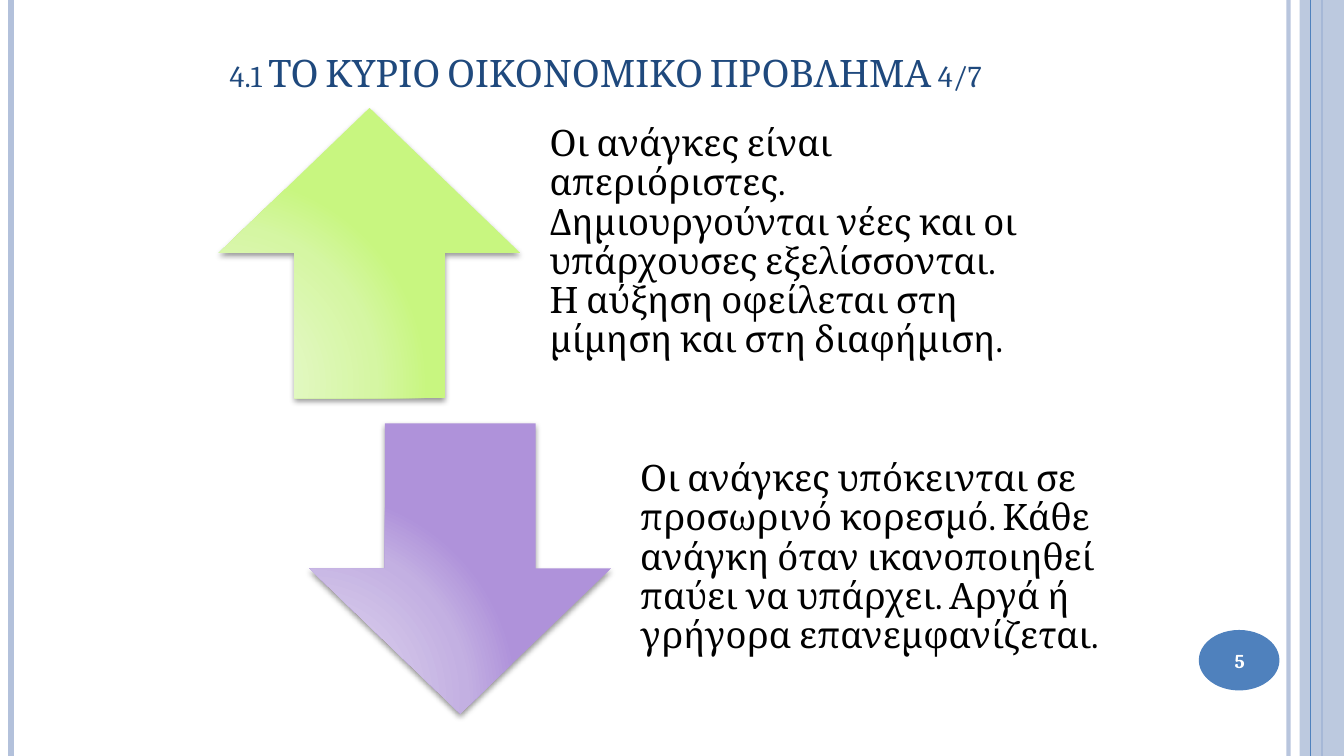
from dataclasses import dataclass

from lxml import etree
from pptx import Presentation
from pptx import util as u
from pptx.dml.color import RGBColor
from pptx.enum import shapes, text
from pptx.oxml import parse_xml
from pptx.oxml.ns import nsdecls, qn

PX = 9144  # 100 px to the inch
WIDTH, HEIGHT = 1333, 750
FONT = "Cambria"
PALE, BLUE, NAVY = "B3C1DB", "4F81BD", "1F497D"
ARROW_SIZE = (299, 288)
NOTE_SIZE = (508, 288)
NOTE_OFFSET = 308
Shape = shapes.MSO_SHAPE
Anchor = text.MSO_ANCHOR
Align = text.PP_ALIGN


@dataclass
class Rule:
    x: int
    color: str
    weight: float
    opacity: int = 100


@dataclass
class Need:
    left: int
    top: int
    arrow: Shape
    shades: tuple
    note: str


RULES_BELOW = [Rule(1278, PALE, 3, 93), Rule(11, PALE, 4.5), Rule(1311, BLUE, 1.5)]
RULE_ABOVE = Rule(1300, BLUE, 0.75)
SHADE_STOPS = (0, 30, 75, 100)
NEEDS = [
    Need(217, 107, Shape.UP_ARROW, ("E5F9C9", "E3F8C4", "D5F6A3", "C8F680"),
         "Οι ανάγκες είναι απεριόριστες. Δημιουργούνται νέες και οι υπάρχουσες "
         "εξελίσσονται. Η αύξηση οφείλεται στη μίμηση και στη διαφήμιση."),
    Need(307, 420, Shape.DOWN_ARROW, ("DBD0ED", "D8CCEB", "C3B0E2", "AF92DA"),
         "Οι ανάγκες υπόκεινται σε προσωρινό κορεσμό. Κάθε ανάγκη όταν ικανοποιηθεί "
         "παύει να υπάρχει. Αργά ή γρήγορα επανεμφανίζεται."),
]


def px(*lengths: int) -> list:
    return [u.Emu(length * PX) for length in lengths]


def paint(target, color: str, opacity: int = 100) -> None:
    """Give a fill a solid colour, optionally see-through."""
    target.solid()
    target.fore_color.rgb = RGBColor.from_string(color)
    if opacity < 100:
        tint = target._xPr.find(qn("a:solidFill"))[0]
        etree.SubElement(tint, qn("a:alpha")).set("val", str(opacity * 1000))


def draw_rule(page, rule: Rule) -> None:
    line = page.shapes.add_connector(
        shapes.MSO_CONNECTOR.STRAIGHT, *px(rule.x, 0, rule.x, HEIGHT))
    line.line.width = u.Pt(rule.weight)
    paint(line.line.fill, rule.color, rule.opacity)
    etree.SubElement(line._element.spPr, qn("a:effectLst"))


def draw_shape(page, kind: Shape, place: tuple, color: str, opacity: int = 100):
    shape = page.shapes.add_shape(kind, *px(*place))
    shape.shadow.inherit = False
    shape.line.fill.background()
    paint(shape.fill, color, opacity)
    return shape


def draw_arrow(page, need: Need) -> None:
    """Draw an arrow lit from its lower left corner, with a soft shadow."""
    place = (need.left, need.top, *ARROW_SIZE)
    props = draw_shape(page, need.arrow, place, need.shades[-1])._element.spPr
    stops = "".join(
        f'<a:gs pos="{stop * 1000}"><a:srgbClr val="{shade}"/></a:gs>'
        for stop, shade in zip(SHADE_STOPS, need.shades))
    gradient = parse_xml(
        f'<a:gradFill {nsdecls("a")} rotWithShape="1"><a:gsLst>{stops}</a:gsLst>'
        '<a:path path="circle">'
        '<a:fillToRect l="5000" t="100000" r="120000" b="10000"/>'
        '</a:path></a:gradFill>')
    props.replace(props.find(qn("a:solidFill")), gradient)
    shadow = parse_xml(
        f'<a:outerShdw {nsdecls("a")} blurRad="50800" dist="25400" dir="5400000" '
        'rotWithShape="0"><a:srgbClr val="000000"><a:alpha val="40000"/>'
        '</a:srgbClr></a:outerShdw>')
    props.find(qn("a:effectLst")).append(shadow)


def draw_text(page, place: tuple, words: str, size: int, color: str,
              anchor=Anchor.MIDDLE, insets: tuple = (10, 5, 10, 5)):
    """Add a wrapped one-paragraph box; return its paragraph and span."""
    box = page.shapes.add_textbox(*px(*place)).text_frame
    box.word_wrap = True
    box.vertical_anchor = anchor
    (box.margin_left, box.margin_top,
     box.margin_right, box.margin_bottom) = px(*insets)
    para = box.paragraphs[0]
    span = para.add_run()
    span.text = words
    span.font.name = FONT
    span.font.size = u.Pt(size)
    span.font.color.rgb = RGBColor.from_string(color)
    return para, span


def main() -> None:
    deck = Presentation()
    deck.slide_width, deck.slide_height = px(WIDTH, HEIGHT)
    page = deck.slides.add_slide(deck.slide_layouts[6])

    # Side rules, right band and number badge
    for rule in RULES_BELOW:
        draw_rule(page, rule)
    draw_shape(page, Shape.RECTANGLE, (1289, 0, 44, HEIGHT), PALE, 87)
    draw_rule(page, RULE_ABOVE)
    draw_shape(page, Shape.OVAL, (1189, 625, 80, 60), BLUE)

    # Arrows with their notes
    for need in NEEDS:
        draw_arrow(page, need)
        place = (need.left + NOTE_OFFSET, need.top, *NOTE_SIZE)
        para, _ = draw_text(page, place, need.note, 26, "000000",
                            insets=(20, 0, 20, 20))
        para.line_spacing = 0.9

    # Slide number
    para, span = draw_text(page, (1185, 627, 89, 57), "5", 14, "FFFFFF")
    para.alignment = Align.CENTER
    span.font.bold = True

    # Title in small capitals
    _, span = draw_text(page, (218, 2, 907, 97),
                        "4.1 ΤΟ ΚΥΡΙΟ ΟΙΚΟΝΟΜΙΚΟ ΠΡΟΒΛΗΜΑ 4/7", 27, NAVY,
                        Anchor.BOTTOM)
    span._r.get_or_add_rPr().set("cap", "small")

    deck.save("out.pptx")


if __name__ == "__main__":
    main()
